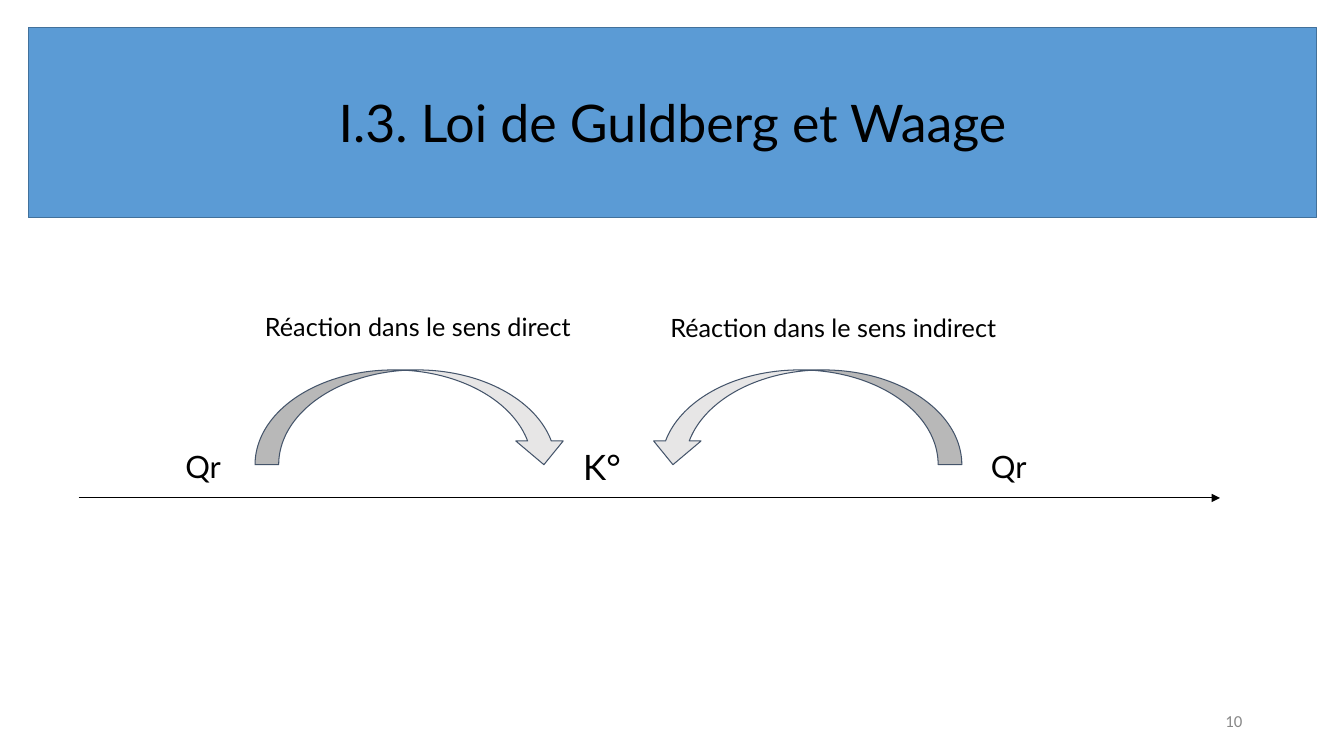
from pptx import Presentation
from pptx import util as u
from pptx.dml.color import RGBColor
from pptx.enum import shapes, text
from pptx.oxml.ns import qn
from lxml import etree


def rgb(value):
    return RGBColor.from_string(value)


class Deck:
    """Holds the style and the current slide."""
    FONT, INK = "Lato", "000000"

    def __init__(self, width, height):
        self.prs = Presentation()
        self.prs.slide_width = u.Inches(width)
        self.prs.slide_height = u.Inches(height)
        self.s = self.prs.slides.add_slide(self.prs.slide_layouts[6])

    def shape(self, kind, box, fill, line, weight, flip=False):
        sp = self.s.shapes.add_shape(kind, *map(u.Inches, box))
        sp.shadow.inherit = False
        sp.fill.solid()
        sp.fill.fore_color.rgb = rgb(fill)
        sp.line.color.rgb = rgb(line)
        sp.line.width = u.Pt(weight)
        if flip:
            sp._element.spPr.find(qn("a:xfrm")).set("flipH", "1")
        return sp

    def text(self, words, box, size, align=text.PP_ALIGN.LEFT, font=FONT,
             color=INK, pad=0.1, anchor=text.MSO_ANCHOR.TOP,
             fit=text.MSO_AUTO_SIZE.SHAPE_TO_FIT_TEXT):
        tf = self.s.shapes.add_textbox(*map(u.Inches, box)).text_frame
        frame = {"word_wrap": True, "auto_size": fit, "vertical_anchor": anchor,
                 "margin_left": u.Inches(0.1), "margin_right": u.Inches(0.1),
                 "margin_top": u.Inches(pad), "margin_bottom": u.Inches(pad)}
        for name, value in frame.items():
            setattr(tf, name, value)
        p = tf.paragraphs[0]
        p.alignment = align
        r = p.add_run()
        r.text = words
        for name, value in {"name": font, "size": u.Pt(size)}.items():
            setattr(r.font, name, value)
        r.font.color.rgb = rgb(color)

    def arrow(self, x1, y1, x2, y2, weight):
        ends = map(u.Inches, (x1, y1, x2, y2))
        cx = self.s.shapes.add_connector(shapes.MSO_CONNECTOR.STRAIGHT, *ends)
        cx.line.color.rgb = rgb(self.INK)
        cx.line.width = u.Pt(weight)
        etree.SubElement(cx.line._get_or_add_ln(), qn("a:tailEnd"), type="triangle")
        etree.SubElement(cx._element.spPr, qn("a:effectLst"))


def main():
    d = Deck(13.33, 7.5)
    center = text.PP_ALIGN.CENTER

    # Slide number
    d.text("10", (9.42, 6.95, 3, 0.4), 12, text.PP_ALIGN.RIGHT, "Calibri", "888888",
           pad=0.05, anchor=text.MSO_ANCHOR.MIDDLE, fit=text.MSO_AUTO_SIZE.NONE)

    # Title banner
    d.shape(shapes.MSO_SHAPE.RECTANGLE, (0.28, 0.27, 12.78, 1.89),
            "5B9BD5", "42719B", 1)
    d.text("I.3. Loi de Guldberg et Waage", (0.28, 0.8, 12.78, 0.82), 37, center)

    # Axis with the equilibrium constant
    d.arrow(0.78, 4.94, 12.1, 4.94, 0.75)
    d.text("K°", (5.33, 4.32, 1.28, 0.62), 25, center)

    # Both directions: quotient, curved arrow, label
    for sense, qr_x, arrow_x, label_x, label_y, flip in (
            ("direct", 1.74, 2.53, 2.53, 2.99, False),
            ("indirect", 9.73, 6.44, 6.55, 3, True)):
        d.text("Qr", (qr_x, 4.34, 1.05, 0.57), 22)
        sp = d.shape(shapes.MSO_SHAPE.CURVED_DOWN_ARROW, (arrow_x, 3.67, 3.1, 0.94),
                     "E7E6E6", "44546A", 0.75, flip)
        for i, value in enumerate((0.25, 0.5, 0.25)):
            sp.adjustments[i] = value
        d.text(f"Réaction dans le sens {sense}", (label_x, label_y, 3.5, 0.5), 18)

    d.prs.save("out.pptx")


if __name__ == "__main__":
    main()
